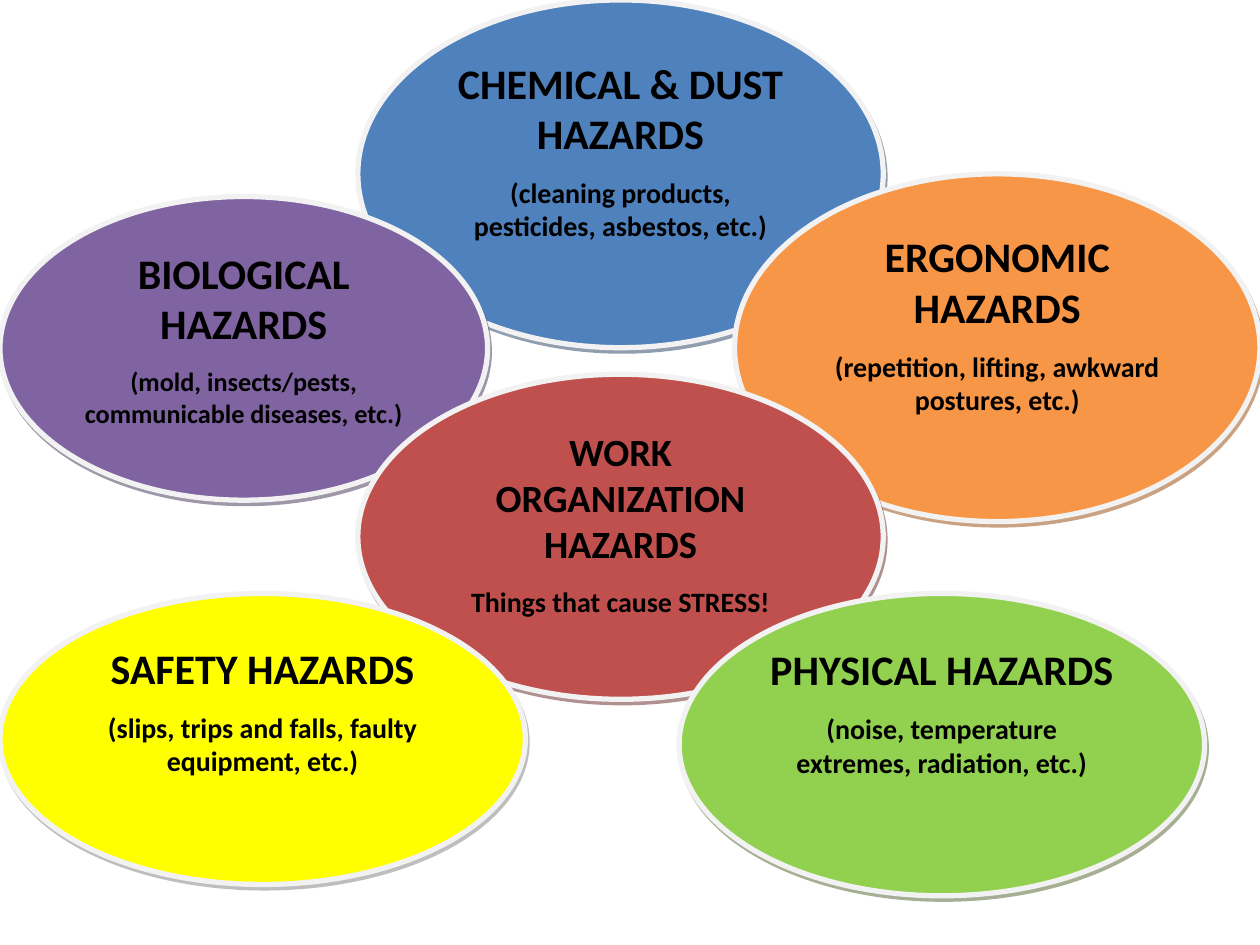
from lxml import etree
from pptx import Presentation
from pptx.dml.color import RGBColor
from pptx.enum.shapes import MSO_SHAPE
from pptx.enum.text import MSO_ANCHOR, PP_ALIGN
from pptx.oxml.ns import qn
from pptx.util import Inches, Pt

HAZARDS = [
    ("CHEMICAL & DUST HAZARDS", 24, "(cleaning products, pesticides, asbestos, etc.)", 16,
     (2.84, 0, 4.17, 2.76), "4F81BD", "243F60"),
    ("BIOLOGICAL HAZARDS", 24, "(mold, insects/pests, communicable diseases, etc.)", 15,
     (0, 1.56, 3.87, 2.41), "8064A2", "3F3151"),
    ("ERGONOMIC HAZARDS", 24, "(repetition, lifting, awkward postures, etc.)", 16,
     (5.83, 1.38, 4.17, 2.76), "F79646", "974706"),
    ("WORK ORGANIZATION HAZARDS", 22, "Things that cause STRESS!", 16,
     (2.84, 2.97, 4.17, 2.58), "C0504D", "622423"),
    ("SAFETY HAZARDS", 24, "(slips, trips and falls, faulty equipment, etc.)", 16,
     (0, 4.71, 4.17, 2.31), "FFFF00", "7F7F7F"),
    ("PHYSICAL HAZARDS", 24, "(noise, temperature extremes, radiation, etc.)", 16,
     (5.39, 4.71, 4.17, 2.4), "92D050", "4E6128"),
]


def color(value):
    return RGBColor.from_string(value)


def add_shadow(shape, value):
    shape.shadow.inherit = False
    effects = shape._element.spPr.find(qn("a:effectLst"))
    shadow = etree.SubElement(effects, qn("a:outerShdw"), blurRad="0", dist=str(Pt(2.2)),
                              dir=str(63 * 60000), algn="ctr", rotWithShape="0")
    tint = etree.SubElement(shadow, qn("a:srgbClr"), val=value)
    etree.SubElement(tint, qn("a:alpha"), val="50000")


def write_paragraph(para, text, size):
    para.text = text
    para.alignment = PP_ALIGN.CENTER
    para.space_after = Pt(10)
    para.font.name = "Calibri"
    para.font.size = Pt(size)
    para.font.bold = True
    para.font.color.rgb = color("000000")


def add_hazard(page, title, title_size, detail, detail_size, bounds, fill, shade):
    oval = page.shapes.add_shape(MSO_SHAPE.OVAL, *map(Inches, bounds))
    oval.fill.solid()
    oval.fill.fore_color.rgb = color(fill)
    oval.line.color.rgb = color("F2F2F2")
    oval.line.width = Pt(3)
    add_shadow(oval, shade)
    frame = oval.text_frame
    frame.word_wrap = True
    frame.vertical_anchor = MSO_ANCHOR.TOP
    write_paragraph(frame.paragraphs[0], title, title_size)
    write_paragraph(frame.add_paragraph(), detail, detail_size)


deck = Presentation()
deck.slide_width, deck.slide_height = Inches(10), Inches(7.5)
page = deck.slides.add_slide(deck.slide_layouts[6])
for hazard in HAZARDS:
    add_hazard(page, *hazard)
deck.save("out.pptx")
